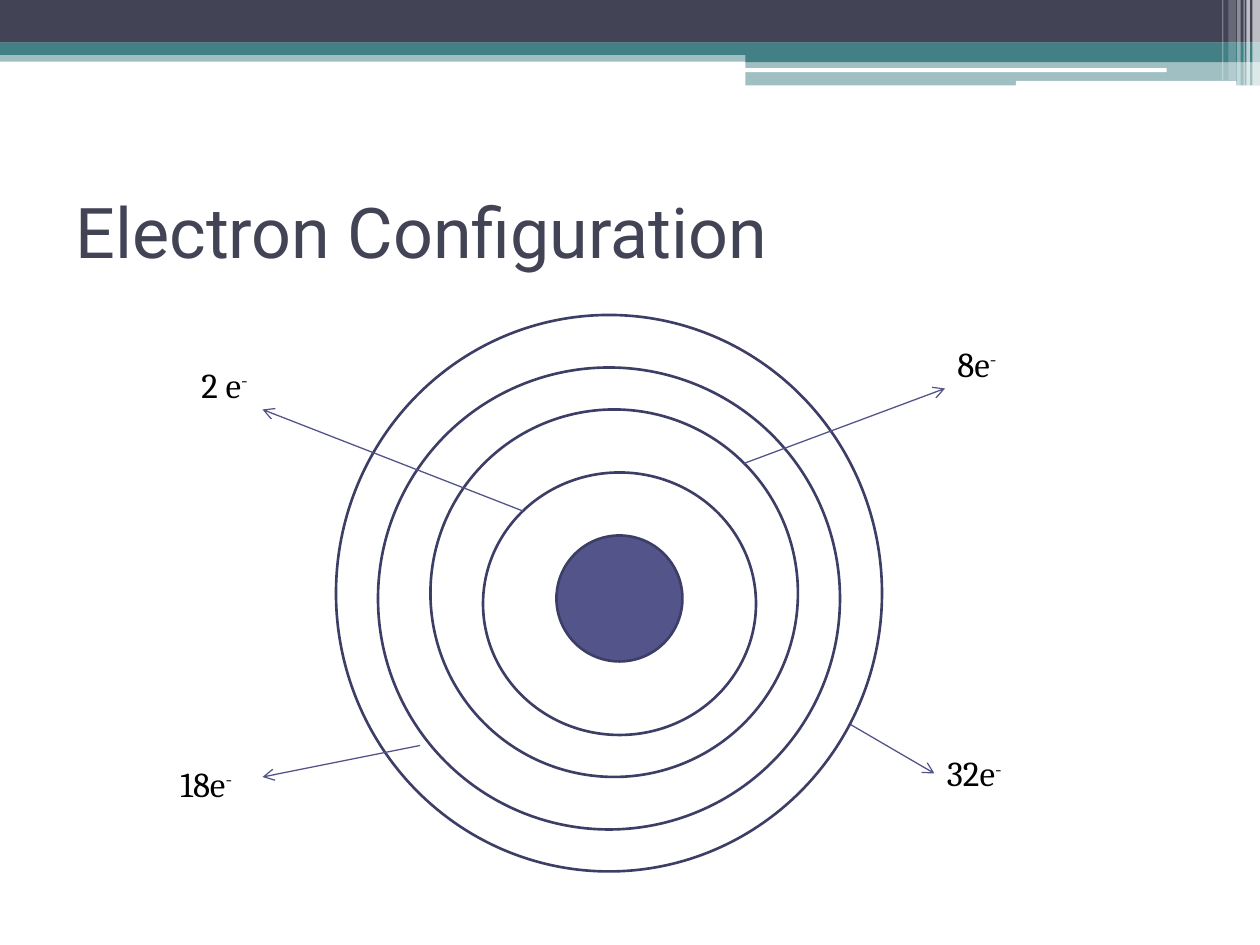
from lxml import etree
from pptx import Presentation
from pptx.dml.color import RGBColor
from pptx.enum.shapes import MSO_CONNECTOR, MSO_SHAPE
from pptx.enum.text import MSO_ANCHOR, MSO_AUTO_SIZE, PP_ALIGN
from pptx.oxml.ns import qn
from pptx.util import Pt

RECTANGLE = MSO_SHAPE.RECTANGLE
ROUNDED = MSO_SHAPE.ROUNDED_RECTANGLE
OVAL = MSO_SHAPE.OVAL
STRAIGHT = MSO_CONNECTOR.STRAIGHT

WHITE = RGBColor(0xFF, 0xFF, 0xFF)
BLACK = RGBColor(0x00, 0x00, 0x00)
SLATE = RGBColor(0x42, 0x44, 0x56)
TEAL = RGBColor(0x43, 0x80, 0x86)
INDIGO = RGBColor(0x53, 0x54, 0x8A)
DARK_INDIGO = RGBColor(0x3D, 0x3E, 0x66)

# Header bands: kind, left, top, width, height, colour, opacity in percent
BANDS = [
    (RECTANGLE, 0, 28.8, 720, 6.4, TEAL, 50),
    (RECTANGLE, 0, 0, 720, 24.4, SLATE, 100),
    (RECTANGLE, 0, 24.2, 720, 7.2, TEAL, 100),
    (RECTANGLE, 426, 28.3, 294, 7.2, TEAL, 100),
    (RECTANGLE, 426, 34.6, 294, 14.2, TEAL, 50),
    (ROUNDED, 425.5, 39, 241.2, 2.2, WHITE, 100),
    (ROUNDED, 580.5, 46.3, 126, 2.9, WHITE, 100),
]
# Stripes at the right edge: left, width, height, opacity in percent
STRIPES = [
    (715.7, 4.3, 49, 65),
    (712.2, 2, 49, 65),
    (710.6, 0.7, 49, 60),
    (707, 2, 49, 40),
    (702, 4.3, 46, 20),
    (698.4, 0.7, 46, 30),
]
# Shells from the outside in, then the nucleus: left, top, width, height, fill
SHELLS = [
    (192, 180, 312, 318, WHITE),
    (216, 210, 264, 264, WHITE),
    (246, 234, 210, 210, WHITE),
    (276, 270, 156, 150, WHITE),
    (318, 306, 72, 72, INDIGO),
]
# Labels: text, left, top, width
LABELS = [
    ("2 e", 108, 204, 48),
    ("8e", 540, 192, 48),
    ("18e", 96, 432, 66),
    ("32e", 534, 426, 66),
]
# Arrows: start x, start y, end x, end y
ARROWS = [
    (298.8, 292, 150, 234),
    (425.2, 264.8, 540, 222),
    (240, 426, 150, 444),
    (486, 414, 534, 442),
]


def add_filled_shape(slide, kind, left, top, width, height, colour, opacity=100):
    shape = slide.shapes.add_shape(kind, Pt(left), Pt(top), Pt(width), Pt(height))
    shape.shadow.inherit = False
    shape.line.fill.background()
    shape.fill.solid()
    shape.fill.fore_color.rgb = colour
    if opacity < 100:
        colour_element = shape.fill._xPr.find(qn("a:solidFill"))[0]
        etree.SubElement(colour_element, qn("a:alpha"), val=str(opacity * 1000))
    return shape


def add_shell(slide, left, top, width, height, colour):
    shell = add_filled_shape(slide, OVAL, left, top, width, height, colour)
    shell.line.color.rgb = DARK_INDIGO
    shell.line.width = Pt(1.5)


def add_run(paragraph, text, font_name, size, colour):
    run = paragraph.add_run()
    run.text = text
    run.font.name = font_name
    run.font.size = Pt(size)
    run.font.color.rgb = colour
    return run


def set_title(slide, text):
    title = slide.shapes.title
    title.left, title.top, title.width, title.height = Pt(36), Pt(90), Pt(648), Pt(84)
    title.text_frame.vertical_anchor = MSO_ANCHOR.MIDDLE
    paragraph = title.text_frame.paragraphs[0]
    paragraph.alignment = PP_ALIGN.LEFT
    add_run(paragraph, text, "Roboto", 40, SLATE)


def add_electron_label(slide, text, left, top, width):
    box = slide.shapes.add_textbox(Pt(left), Pt(top), Pt(width), Pt(31.5))
    box.text_frame.word_wrap = True
    box.text_frame.auto_size = MSO_AUTO_SIZE.SHAPE_TO_FIT_TEXT
    paragraph = box.text_frame.paragraphs[0]
    add_run(paragraph, text, "Cambria", 20, BLACK)
    charge = add_run(paragraph, "-", "Cambria", 20, BLACK)
    charge.font._element.set("baseline", "30000")


def add_arrow(slide, start_x, start_y, end_x, end_y):
    arrow = slide.shapes.add_connector(
        STRAIGHT, Pt(start_x), Pt(start_y), Pt(end_x), Pt(end_y))
    arrow.line.color.rgb = INDIGO
    arrow.line.width = Pt(0.75)
    etree.SubElement(arrow.line._get_or_add_ln(), qn("a:tailEnd"), type="arrow")
    etree.SubElement(arrow._element.spPr, qn("a:effectLst"))


def main():
    presentation = Presentation()
    presentation.slide_width, presentation.slide_height = Pt(720), Pt(540)
    slide = presentation.slides.add_slide(presentation.slide_layouts[5])

    # Header decoration
    for band in BANDS:
        add_filled_shape(slide, *band)
    for left, width, height, opacity in STRIPES:
        add_filled_shape(slide, RECTANGLE, left, 0, width, height, WHITE, opacity)

    set_title(slide, "Electron Configuration")

    # Atom with its labelled shells
    for shell in SHELLS:
        add_shell(slide, *shell)
    for label in LABELS:
        add_electron_label(slide, *label)
    for arrow in ARROWS:
        add_arrow(slide, *arrow)

    presentation.save("out.pptx")


if __name__ == "__main__":
    main()
